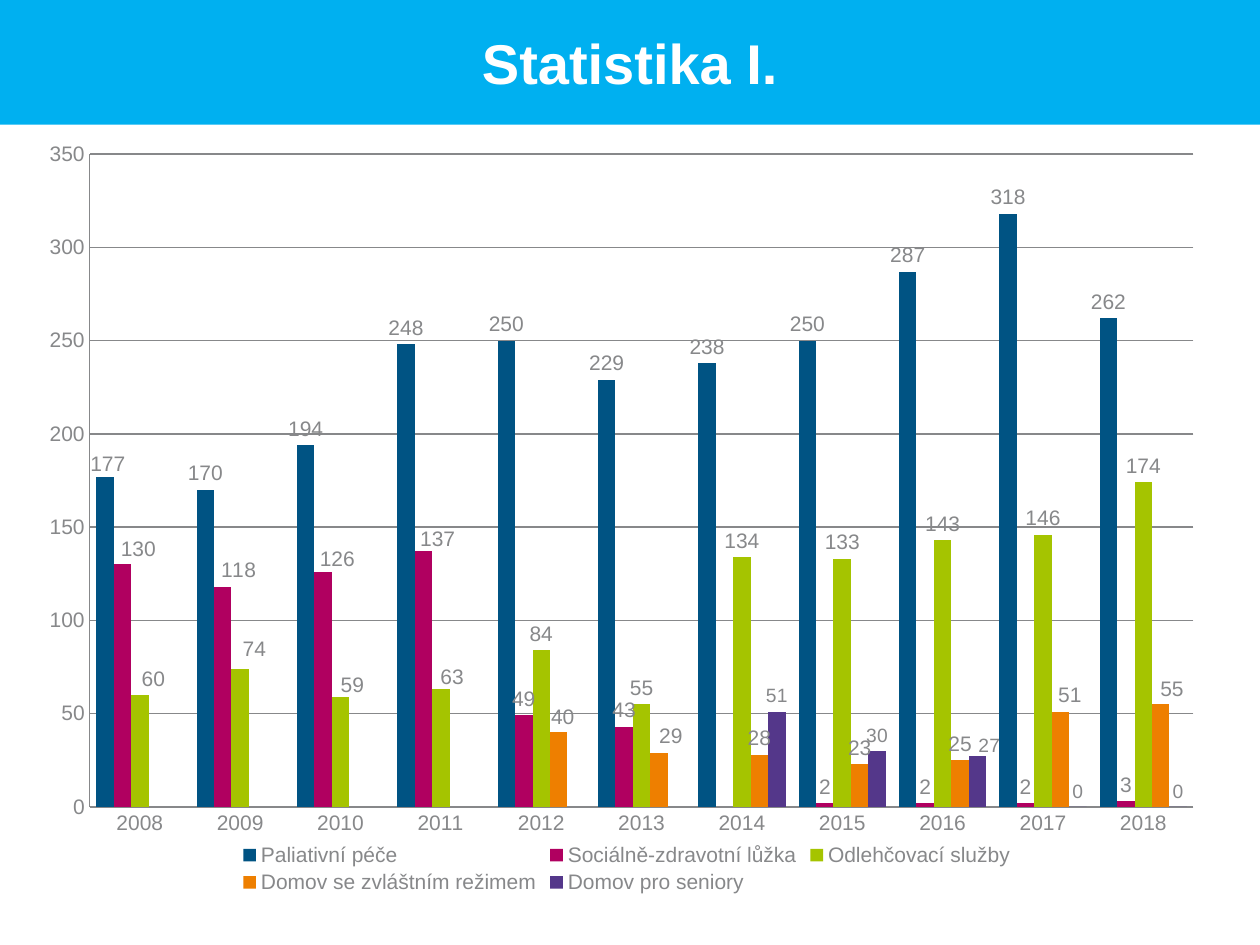
from lxml.etree import SubElement
from pptx import Presentation
from pptx.chart.data import CategoryChartData as ChartData
from pptx.dml.color import RGBColor
from pptx.enum.chart import XL_CHART_TYPE as ChartType
from pptx.enum.chart import XL_LABEL_POSITION as LabelPosition
from pptx.enum.chart import XL_LEGEND_POSITION as LegendPosition
from pptx.enum.chart import XL_TICK_MARK as TickMark
from pptx.enum.text import MSO_ANCHOR as Anchor
from pptx.enum.text import PP_ALIGN as Align
from pptx.oxml import parse_xml
from pptx.oxml.ns import nsdecls, qn
from pptx.util import Inches, Pt

GREY = "87888A"
YEARS = [str(year) for year in range(2008, 2019)]

# Name, colour, label size, values, label shifts {point: (x, y)} in % of the chart
SERIES = [
    ("Paliativní péče", "005383", 12,
     [177, 170, 194, 248, 250, 229, 238, 250, 287, 318, 262], {0: (0.25, 0.5)}),
    ("Sociálně-zdravotní lůžka", "B00060", 12,
     [130, 118, 126, 137, 49, 43, None, 2, 2, 2, 3],
     {0: (1.35, 0.1), 1: (1.35, 0), 2: (1.2, 0.5), 3: (1.2, 0.5)}),
    ("Odlehčovací služby", "A5C400", 12,
     [60, 74, 59, 63, 84, 55, 134, 133, 143, 146, 174],
     {0: (1.15, 0), 1: (1.2, -0.4), 2: (1, 0.6), 3: (0.95, 0.5)}),
    ("Domov se zvláštním režimem", "EE7F00", 12,
     [None] * 4 + [40, 29, 28, 23, 25, 51, 55],
     {4: (0.35, 0.1), 5: (1, 0), 9: (0.8, 0), 10: (0.95, 0.1)}),
    ("Domov pro seniory", "54378A", 11,
     [None] * 6 + [51, 30, 27, 0, 0], {8: (1, 0.6)}),
]


def color(value):
    return RGBColor.from_string(value)


def manual_layout(**settings):
    """Return a c:layout element holding the given settings."""
    layout = parse_xml(f"<c:layout {nsdecls('c')}><c:manualLayout/></c:layout>")
    for name, value in settings.items():
        SubElement(layout[0], qn(f"c:{name}")).set("val", str(value))
    return layout


class SlideBuilder:
    font_name = "Arial"

    def __init__(self, presentation):
        self.width = presentation.slide_width
        self.height = presentation.slide_height
        self.slide = presentation.slides.add_slide(presentation.slide_layouts[5])

    def box(self, left, top, width, height):
        """Turn shares of the slide's size into lengths."""
        return (int(left * self.width), int(top * self.height),
                int(width * self.width), int(height * self.height))

    def style(self, font, size, text_color=GREY, bold=False):
        font.name, font.size, font.bold = self.font_name, Pt(size), bold
        font.color.rgb = color(text_color)

    def title(self, text, place, fill):
        shape = self.slide.shapes.title
        shape.left, shape.top, shape.width, shape.height = self.box(*place)
        shape.fill.solid()
        shape.fill.fore_color.rgb = color(fill)
        shape.text_frame.vertical_anchor = Anchor.MIDDLE
        paragraph = shape.text_frame.paragraphs[0]
        paragraph.alignment = Align.CENTER
        run = paragraph.add_run()
        run.text = text
        self.style(run.font, 32, "FFFFFF", True)

    def column_chart(self, place, categories, series_list, plot_area):
        data = ChartData()
        data.categories = categories
        for name, _, _, values, _ in series_list:
            data.add_series(name, values)
        chart = self.slide.shapes.add_chart(
            ChartType.COLUMN_CLUSTERED, *self.box(*place), data).chart
        chart.has_title = False
        self.style(chart.font, 12)
        self.legend(chart)
        self.axes(chart)

        # Plot area
        plot = chart.plots[0]
        plot.gap_width, plot.overlap, plot.vary_by_categories = 75, 0, False
        area = plot._element.getparent()
        for old in area.findall(qn("c:layout")):
            area.remove(old)
        left, top, width, height = plot_area
        area.insert(0, manual_layout(
            layoutTarget="inner", xMode="edge", yMode="edge",
            x=left, y=top, w=width, h=height))

        for series, (_, fill, size, _, shifts) in zip(plot.series, series_list):
            series.format.fill.solid()
            series.format.fill.fore_color.rgb = color(fill)
            self.labels(series, size, shifts)

    def legend(self, chart):
        chart.has_legend = True
        chart.legend.position = LegendPosition.BOTTOM
        chart.legend.include_in_layout = False
        self.style(chart.legend.font, 12)

    def axes(self, chart):
        for axis in (chart.category_axis, chart.value_axis):
            axis.major_tick_mark = axis.minor_tick_mark = TickMark.NONE
            self.style(axis.tick_labels.font, 12)
            self.line(axis.format.line)
        axis = chart.value_axis
        axis.minimum_scale, axis.maximum_scale, axis.major_unit = 0, 350, 50
        axis.has_major_gridlines = True
        self.line(axis.major_gridlines.format.line)

    def line(self, line):
        line.color.rgb = color(GREY)
        line.width = Pt(0.75)

    def labels(self, series, size, shifts):
        labels = series.data_labels
        labels.show_value = True
        labels.position = LabelPosition.OUTSIDE_END
        self.style(labels.font, size)
        # Labels moved aside from their columns
        for index in shifts:
            label = series.points[index].data_label
            self.style(label.font, size)
            label.position = LabelPosition.OUTSIDE_END
        for element in labels._element.findall(qn("c:dLbl")):
            number = element.find(qn("c:idx"))
            x, y = shifts[int(number.get("val"))]
            number.addnext(manual_layout(x=x / 100, y=y / 100))


def main():
    presentation = Presentation()
    presentation.slide_width, presentation.slide_height = Inches(10), Inches(7.5)
    builder = SlideBuilder(presentation)
    # Title band
    builder.title("Statistika I.", (0, 0, 1, 0.132), "00B0F0")
    # Yearly figures by service
    builder.column_chart((0.028, 0.143, 0.939, 0.808), YEARS, SERIES,
                         (0.046, 0.025, 0.933, 0.855))
    presentation.save("out.pptx")


if __name__ == "__main__":
    main()
